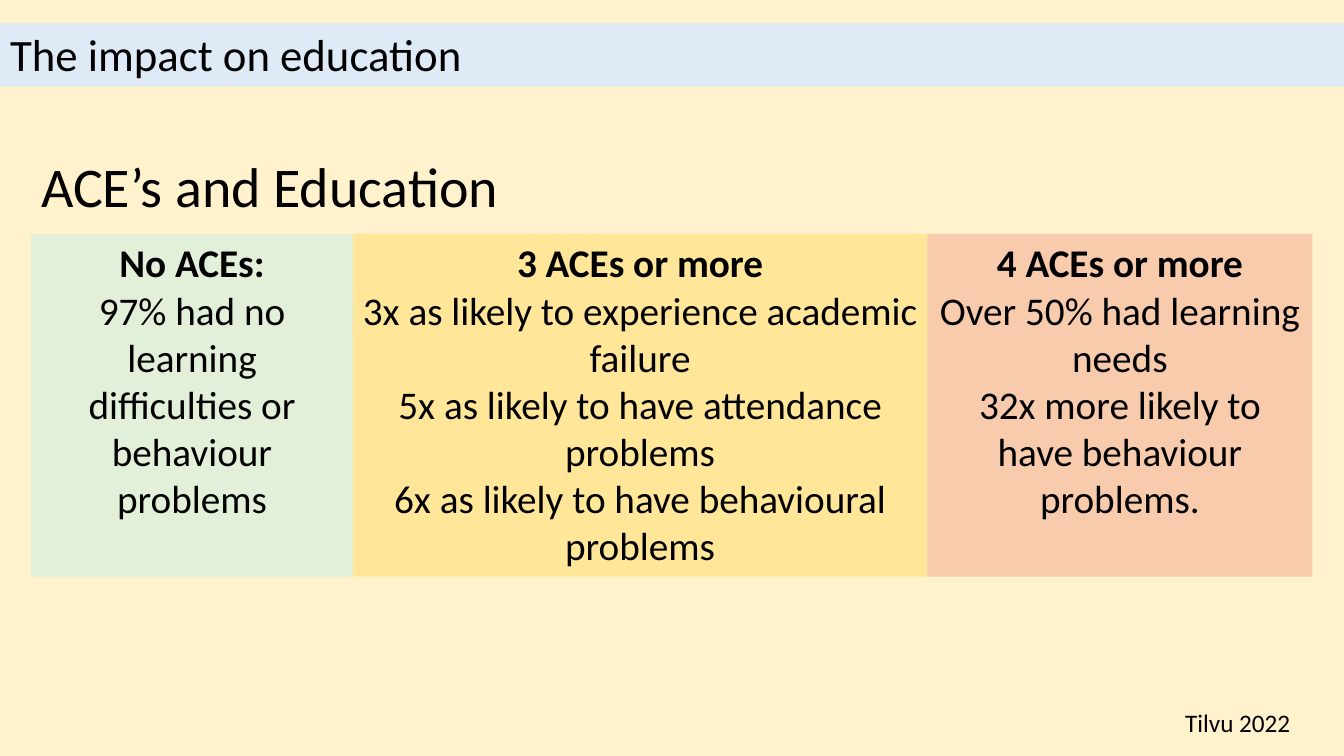
from dataclasses import dataclass
from itertools import accumulate

from pptx import Presentation
from pptx.dml.color import RGBColor as Color
from pptx.enum.shapes import MSO_SHAPE as ShapeKind
from pptx.enum.text import MSO_ANCHOR as Anchor, MSO_AUTO_SIZE as AutoSize, PP_ALIGN as Align
from pptx.shapes.autoshape import Shape
from pptx.shapes.shapetree import GroupShapes
from pptx.slide import Slide
from pptx.util import Pt


@dataclass(frozen=True)
class Theme:
    font: str = "Calibri"
    text: str = "000000"
    background: str = "FFF2CC"
    band: str = "DEEBF7"
    green: str = "E2F0D9"
    yellow: str = "FFE699"
    orange: str = "F8CBAD"
    title_size: int = 32
    heading_size: int = 40
    panel_size: int = 28
    footer_size: int = 18


@dataclass(frozen=True)
class Box:
    left: float
    top: float
    width: float
    height: float

    def lengths(self) -> tuple[Pt, Pt, Pt, Pt]:
        return Pt(self.left), Pt(self.top), Pt(self.width), Pt(self.height)


@dataclass(frozen=True)
class Panel:
    width: float
    fill: str
    heading: str
    findings: tuple[str, ...]


@dataclass(frozen=True)
class Label:
    box: Box
    text: str
    size: int


THEME = Theme()
SLIDE_WIDTH, SLIDE_HEIGHT = 960, 540
TITLE_BOX = Box(0, 16.56, SLIDE_WIDTH, 45.36)
PANELS_LEFT, PANELS_TOP, PANELS_HEIGHT = 22.32, 167.04, 244.8

PANELS = (
    Panel(229.68, THEME.green, "No ACEs:",
          ("97% had no learning difficulties or behaviour problems",)),
    Panel(410.4, THEME.yellow, "3 ACEs or more",
          ("3x as likely to experience academic failure",
           "5x as likely to have attendance problems",
           "6x as likely to have behavioural problems")),
    Panel(275.04, THEME.orange, "4 ACEs or more",
          ("Over 50% had learning needs",
           "32x more likely to have behaviour problems.")),
)

LABELS = (
    Label(Box(22.32, 104.4, 344.88, 55.44), "ACE’s and Education", THEME.heading_size),
    Label(Box(839.52, 501.84, 98.64, 28.8), "Tilvu 2022", THEME.footer_size),
)


def apply_format(target: object, values: dict[str, object]) -> None:
    for name, value in values.items():
        setattr(target, name, value)


def fill_solid(shape: Shape, color: str) -> None:
    shape.fill.solid()
    shape.fill.fore_color.rgb = Color.from_string(color)


def write_lines(shape: Shape, lines: tuple[str, ...], size: int,
                align: Align = Align.LEFT, bold_first: bool = False) -> None:
    frame = shape.text_frame
    frame.text = "\n".join(lines)
    for index, paragraph in enumerate(frame.paragraphs):
        paragraph.alignment = align
        font = paragraph.runs[0].font
        apply_format(font, {"name": THEME.font, "size": Pt(size),
                            "bold": bold_first and index == 0})
        font.color.rgb = Color.from_string(THEME.text)


def draw_title(slide: Slide) -> None:
    title = slide.shapes.title
    apply_format(title, dict(zip(("left", "top", "width", "height"), TITLE_BOX.lengths())))
    fill_solid(title, THEME.band)
    write_lines(title, ("The impact on education",), THEME.title_size)
    apply_format(title.text_frame, {"vertical_anchor": Anchor.BOTTOM, "word_wrap": True,
                                    "auto_size": AutoSize.NONE})
    title.text_frame.paragraphs[0].line_spacing = 0.9


def draw_label(slide: Slide, label: Label) -> None:
    shape = slide.shapes.add_textbox(*label.box.lengths())
    write_lines(shape, (label.text,), label.size)
    apply_format(shape.text_frame, {"word_wrap": False,
                                    "auto_size": AutoSize.SHAPE_TO_FIT_TEXT})


def draw_panel(shapes: GroupShapes, panel: Panel, left: float) -> None:
    box = Box(left, PANELS_TOP, panel.width, PANELS_HEIGHT)
    shape = shapes.add_shape(ShapeKind.RECTANGLE, *box.lengths())
    shape.shadow.inherit = False
    fill_solid(shape, panel.fill)
    shape.line.fill.background()
    write_lines(shape, (panel.heading, *panel.findings), THEME.panel_size,
                Align.CENTER, bold_first=True)
    apply_format(shape.text_frame, {"vertical_anchor": Anchor.TOP, "word_wrap": True})


def main() -> None:
    presentation = Presentation()
    apply_format(presentation, {"slide_width": Pt(SLIDE_WIDTH),
                                "slide_height": Pt(SLIDE_HEIGHT)})
    slide = presentation.slides.add_slide(presentation.slide_layouts.get_by_name("Title Only"))
    fill_solid(slide.background, THEME.background)
    draw_title(slide)
    group = slide.shapes.add_group_shape()
    lefts = accumulate((panel.width for panel in PANELS), initial=PANELS_LEFT)
    for panel, left in zip(PANELS, lefts):
        draw_panel(group.shapes, panel, left)
    for label in LABELS:
        draw_label(slide, label)
    presentation.save("out.pptx")


if __name__ == "__main__":
    main()
